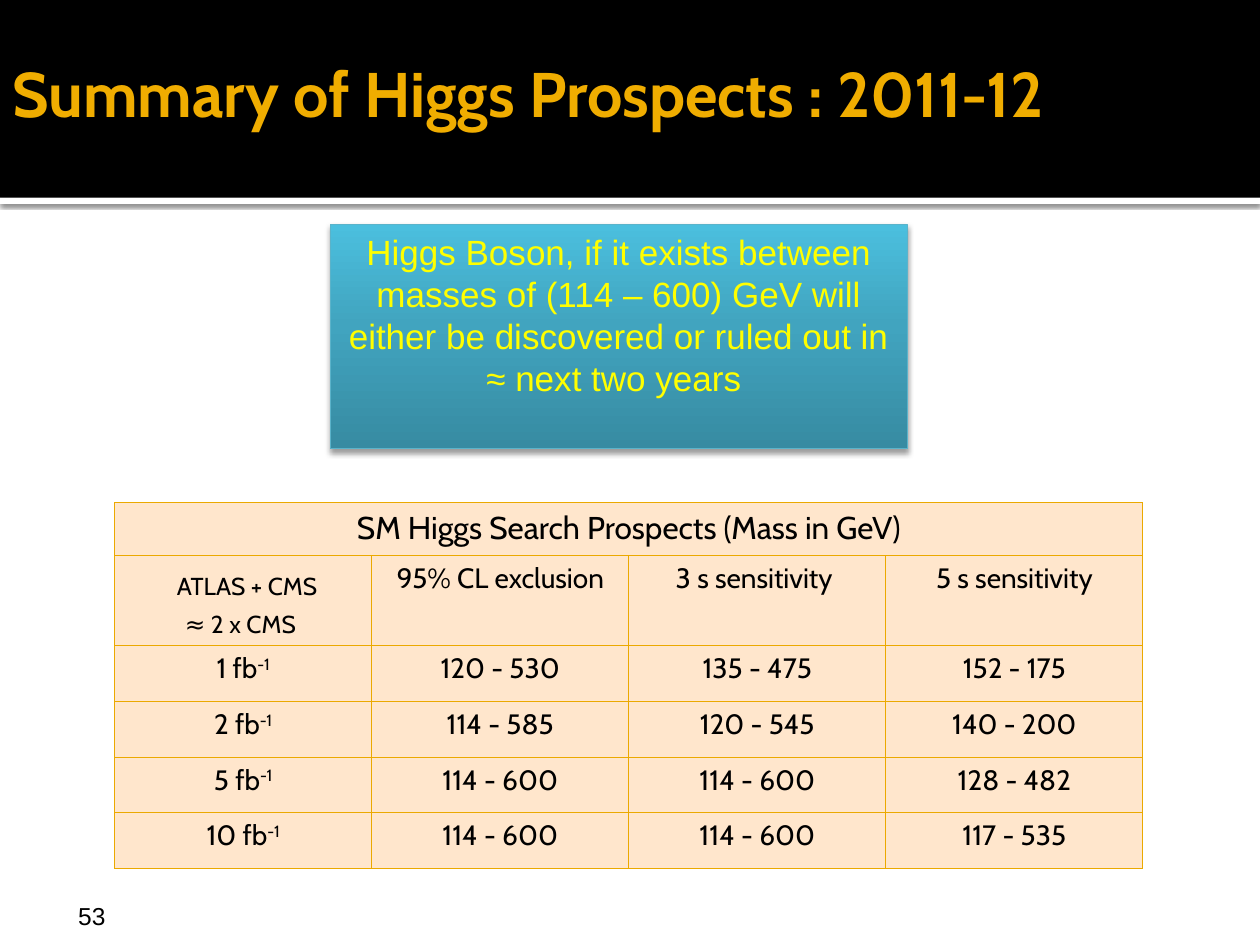
from dataclasses import dataclass

from lxml import etree
from pptx import Presentation
from pptx.dml.color import RGBColor
from pptx.enum import shapes, text
from pptx.oxml import ns
from pptx.util import Pt


@dataclass(frozen=True)
class Theme:
    heading_font: str = "Cabin"
    body_font: str = "Arial"
    black: str = "000000"
    white: str = "FFFFFF"
    title: str = "F0AD00"
    callout_text: str = "FFFF00"
    callout_line: str = "5BB3CA"
    callout_stops: tuple = ((0, "378BA2"), (55, "41A4BF"), (100, "4BBFDE"))
    cell: str = "FFE6CC"
    border: str = "EBA900"
    title_size: int = 36
    callout_size: int = 20
    caption_size: int = 18
    cell_size: int = 16
    small_size: int = 14


THEME = Theme()
HEADER = ["95% CL exclusion", "3 s sensitivity ", "5 s sensitivity"]
PROSPECTS = [
    ("1", "120 - 530", "135 - 475", "152 - 175"),
    ("2", "114 - 585", "120 - 545", "140 - 200"),
    ("5", "114 - 600", "114 - 600", "128 - 482"),
    ("10", "114 - 600", "114 - 600", "117 - 535"),
]


def assign(target, values):
    for name, value in values.items():
        setattr(target, name, value)


def child(parent, tag, **attributes):
    element = etree.SubElement(parent, ns.qn(tag))
    for name, value in attributes.items():
        element.set(name, str(value))
    return element


def write(paragraph, words, size, color, font, bold=False, raised=False):
    run = paragraph.add_run()
    run.text = words
    assign(run.font, {"size": Pt(size), "name": font, "bold": bold})
    run.font.color.rgb = RGBColor.from_string(color)
    if raised:
        run.font._element.set("baseline", "30000")


def format_frame(frame, anchor, left=7.2, top=3.6, right=7.2, bottom=3.6):
    assign(frame, {
        "word_wrap": True, "auto_size": text.MSO_AUTO_SIZE.NONE,
        "vertical_anchor": anchor,
        "margin_left": Pt(left), "margin_top": Pt(top),
        "margin_right": Pt(right), "margin_bottom": Pt(bottom),
    })


def add_panel(slide, box, fill=None):
    panel = slide.shapes.add_shape(
        shapes.MSO_SHAPE.RECTANGLE, *[Pt(v) for v in box])
    panel.shadow.inherit = False
    panel.line.fill.background()
    if fill:
        panel.fill.solid()
        panel.fill.fore_color.rgb = RGBColor.from_string(fill)
    return panel


def add_shadow(panel, opacity, blur, distance):
    effects = panel._element.spPr.find(ns.qn("a:effectLst"))
    shadow = child(effects, "a:outerShdw", blurRad=Pt(blur), dist=Pt(distance),
                   dir=5400000, algn="ctr", rotWithShape=0)
    color = child(shadow, "a:srgbClr", val=THEME.black)
    child(color, "a:alpha", val=opacity * 1000)


def add_heading(slide, box):
    left, top, width, height = box
    rule = add_panel(slide, (left, top + height, width, 3.6), THEME.white)
    add_shadow(rule, 60, 2.5, 0.8)
    add_panel(slide, box, THEME.black)

    title = slide.shapes.title
    slide.shapes._spTree.append(title._element)
    assign(title, {"left": Pt(left), "top": Pt(top),
                   "width": Pt(width), "height": Pt(height - 7.2)})
    format_frame(title.text_frame, text.MSO_ANCHOR.MIDDLE, right=3.6)
    heading = title.text_frame.paragraphs[0]
    heading.alignment = text.PP_ALIGN.LEFT
    write(heading, "Summary of Higgs Prospects : 2011-12", THEME.title_size,
          THEME.title, THEME.heading_font, bold=True)


def add_callout(slide, box):
    callout = add_panel(slide, box)
    callout.fill.gradient()
    gradient = callout._element.spPr.find(ns.qn("a:gradFill"))
    for part in list(gradient):
        gradient.remove(part)
    stops = child(gradient, "a:gsLst")
    for position, color in THEME.callout_stops:
        stop = child(stops, "a:gs", pos=position * 1000)
        child(stop, "a:srgbClr", val=color)
    child(gradient, "a:lin", ang=16200000, scaled=0)
    callout.line.color.rgb = RGBColor.from_string(THEME.callout_line)
    callout.line.width = Pt(0.5)
    add_shadow(callout, 38, 3.1, 2)

    format_frame(callout.text_frame, text.MSO_ANCHOR.TOP)
    message = callout.text_frame.paragraphs[0]
    message.alignment = text.PP_ALIGN.CENTER
    write(message, "Higgs Boson, if it exists between masses of (114 – 600) GeV "
          "will either be discovered or ruled out in ≈ next two years ",
          THEME.callout_size, THEME.callout_text, THEME.body_font)


def format_cell(cell):
    properties = cell._tc.get_or_add_tcPr()
    for side in ("a:lnL", "a:lnR", "a:lnT", "a:lnB"):
        line = child(properties, side, w=Pt(0.5))
        child(child(line, "a:solidFill"), "a:srgbClr", val=THEME.border)
    cell.fill.solid()
    cell.fill.fore_color.rgb = RGBColor.from_string(THEME.cell)


def fill_cell(cell, *lines):
    for index, pieces in enumerate(lines):
        frame = cell.text_frame
        paragraph = frame.add_paragraph() if index else frame.paragraphs[0]
        paragraph.alignment = text.PP_ALIGN.CENTER
        if index:
            paragraph.space_before = Pt(2.8)
        for words, size, *raised in pieces:
            write(paragraph, words, size, THEME.black, THEME.heading_font,
                  raised=bool(raised))


def add_prospects(slide, box):
    heights = [30.3, 51.4] + [31.85] * len(PROSPECTS)
    table = slide.shapes.add_table(
        len(heights), len(HEADER) + 1, *[Pt(v) for v in box]).table
    assign(table, {"first_row": False, "horz_banding": False})
    for column in table.columns:
        column.width = Pt(box[2] / len(table.columns))
    for row, height in zip(table.rows, heights):
        row.height = Pt(height)
    for cell in table.iter_cells():
        format_cell(cell)

    table.cell(0, 0).merge(table.cell(0, len(HEADER)))
    fill_cell(table.cell(0, 0),
              [("SM Higgs Search Prospects (Mass in GeV)", THEME.caption_size)])
    fill_cell(table.cell(1, 0),
              [(" ", THEME.callout_size), ("ATLAS + CMS", THEME.small_size)],
              [("≈ 2 x CMS ", THEME.small_size)])
    size = THEME.cell_size
    for row, (luminosity, *ranges) in enumerate(PROSPECTS, 2):
        fill_cell(table.cell(row, 0),
                  [(luminosity + " fb", size), ("-1", size, True)])
        for column, mass_range in enumerate(ranges, 1):
            fill_cell(table.cell(row, column), [(mass_range, size)])
    for column, label in enumerate(HEADER, 1):
        fill_cell(table.cell(1, column), [(label, size)])


def add_page_number(slide, box):
    number = slide.shapes.add_textbox(*[Pt(v) for v in box])
    format_frame(number.text_frame, text.MSO_ANCHOR.BOTTOM,
                 left=8.64, right=3.6, bottom=0)
    write(number.text_frame.paragraphs[0], "53", THEME.small_size,
          THEME.black, THEME.body_font)


def main():
    deck = Presentation()
    assign(deck, {"slide_width": Pt(720), "slide_height": Pt(540)})
    slide = deck.slides.add_slide(deck.slide_layouts[5])
    add_heading(slide, (0, 0, 720, 113))
    add_page_number(slide, (36, 510, 168, 21.6))
    add_callout(slide, (188.6, 128.2, 330, 128.2))
    add_prospects(slide, (65.5, 287.2, 587.6, 209.1))
    deck.save("out.pptx")


if __name__ == "__main__":
    main()
